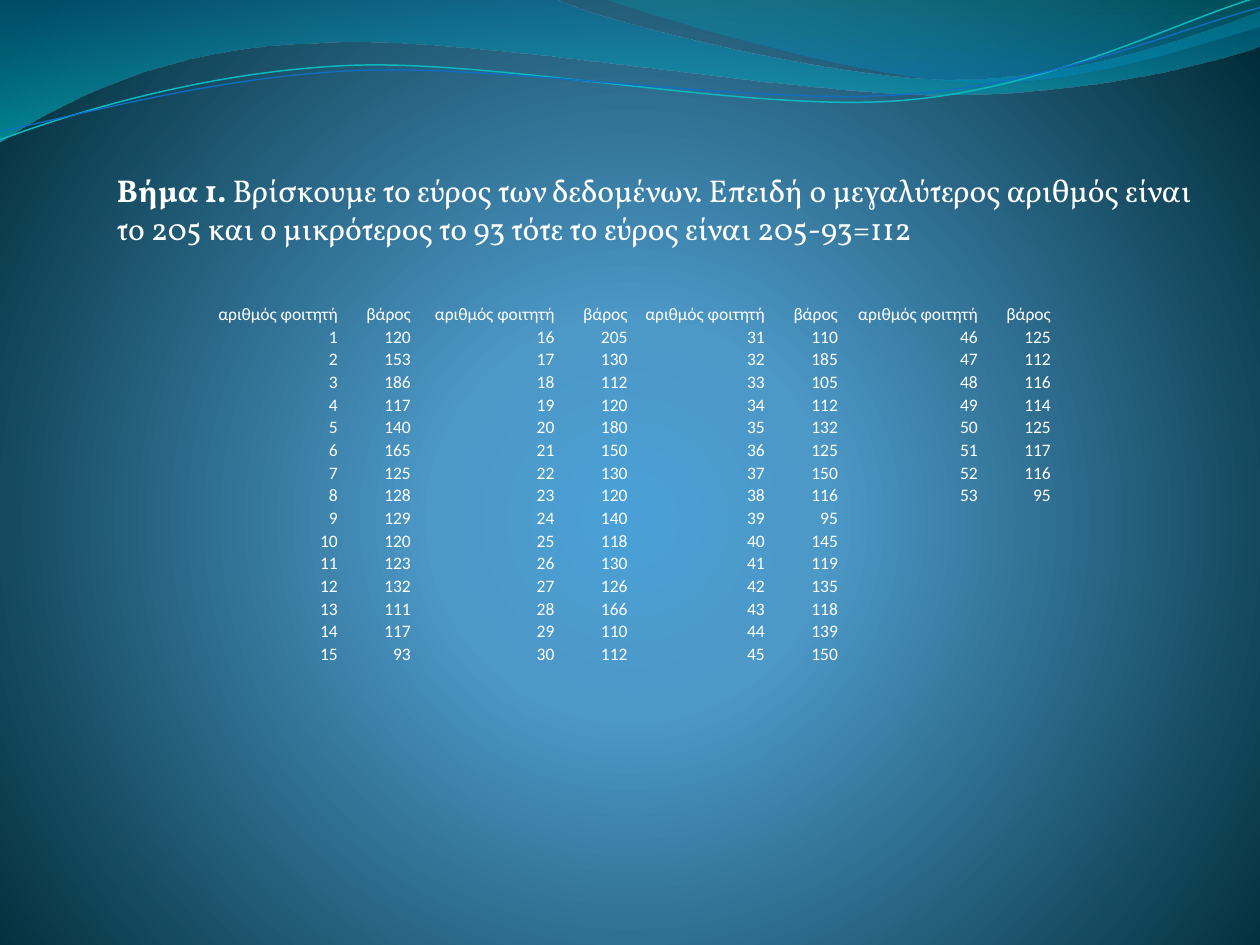
"""Build a slide with wave decoration, a statement and a table of student weights."""
from math import cos, radians, sin

from lxml import etree
from pptx import Presentation
from pptx.dml.color import RGBColor
from pptx.enum.text import MSO_ANCHOR, MSO_AUTO_SIZE, PP_ALIGN
from pptx.oxml.ns import qn
from pptx.util import Inches, Pt

RIGHT = PP_ALIGN.RIGHT
BOTTOM = MSO_ANCHOR.BOTTOM
GROW = MSO_AUTO_SIZE.SHAPE_TO_FIT_TEXT
NO_STYLE = "{2D5ABB26-0587-4C30-8999-92F81FD0307C}"
TILT = 2.7


def set_gradient(parent, stops):
    """Swap the solid fill for gradient stops of position, colour and opacity; return the gradient."""
    solid = parent.find(qn("a:solidFill"))
    grad = etree.Element(qn("a:gradFill"), rotWithShape="1")
    parent.replace(solid, grad)
    stop_list = etree.SubElement(grad, qn("a:gsLst"))
    for position, color, opacity in stops:
        stop = etree.SubElement(stop_list, qn("a:gs"), pos=str(position * 1000))
        clr = etree.SubElement(stop, qn("a:srgbClr"), val=color)
        if opacity < 100:
            etree.SubElement(clr, qn("a:alpha"), val=str(opacity * 1000))
    return grad


def add_curve(slide, bounds, segments, closed):
    """Draw a freeform in bounds; six numbers make a Bezier curve, two a line."""
    left, top, width, height = bounds
    builder = slide.shapes.build_freeform(Inches(left), Inches(top), scale=1.0)
    builder.add_line_segments([(Inches(left + width), Inches(top + height))], close=False)
    shape = builder.convert_to_shape()
    shape.shadow.inherit = False
    outline = shape.element.find(".//" + qn("a:path"))
    for child in list(outline):
        outline.remove(child)
    for i, seg in enumerate(segments):
        tag = "a:moveTo" if i == 0 else "a:lnTo" if len(seg) == 2 else "a:cubicBezTo"
        step = etree.SubElement(outline, qn(tag))
        for x, y in zip(seg[::2], seg[1::2]):
            etree.SubElement(step, qn("a:pt"), x=str(Inches(x - left)), y=str(Inches(y - top)))
    if closed:
        etree.SubElement(outline, qn("a:close"))
    return shape


prs = Presentation()
prs.slide_width, prs.slide_height = Inches(10), Inches(7.5)
s = prs.slides.add_slide(prs.slide_layouts[6])

bg = s.background.fill
bg.solid()
bg.fore_color.rgb = RGBColor.from_string("4AA0D6")
grad = set_gradient(s.element.find(".//" + qn("p:bgPr")),
                    [(0, "4AA0D6", 100), (25, "4C98C7", 100), (100, "002C38", 100)])
circle = etree.SubElement(grad, qn("a:path"), path="circle")
etree.SubElement(circle, qn("a:fillToRect"), l="10000", t="110000", r="10000", b="100000")

waves = [
    ((-0.01, -0.01, 10.02, 1.14),
     [(0, 0), (4.4, -0.01), (4.76, 0.17, 6.64, 0.63, 7.58, 0.63),
      (8.53, 0.63, 9.58, 0.26, 10, 0.09), (10.01, 0.36),
      (9.83, 0.44, 8.7, 0.76, 7.46, 0.75), (6.22, 0.75, 3.82, 0.28, 2.57, 0.34),
      (1.29, 0.36, 0.46, 0.83, -0.01, 1.13), (0, 0)],
     [(0, "0074A1", 45), (100, "00C6CF", 55)]),
    ((4.79, -0.01, 5.21, 0.7),
     [(4.79, -0.01), (5.09, 0.11, 6.82, 0.62, 7.69, 0.65),
      (8.56, 0.69, 9.61, 0.32, 10, 0.21), (10, 0), (4.79, -0.01)],
     [(0, "00A1A9", 30), (80, "008BBF", 45)]),
]
for bounds, outline, stops in waves:
    wave = add_curve(s, bounds, outline, True)
    wave.line.fill.background()
    wave.fill.solid()
    wave.fill.fore_color.rgb = RGBColor.from_string(stops[0][1])
    grad = set_gradient(wave.element.spPr, stops)
    etree.SubElement(grad, qn("a:lin"), ang="5400000", scaled="1")

strands = [
    ((-0.02, 0.22, 10.02, 0.71),
     [(0, 1.11), (0.48, 0.93, 1.58, 0.57, 2.77, 0.52), (3.95, 0.47, 5.93, 0.89, 7.13, 0.8),
      (8.33, 0.71, 9.38, 0.15, 9.98, -0.02)], "0AB8BF", 0.85),
    ((-0.02, 0.3, 10.03, 0.58),
     [(0, 1.04), (0.47, 0.96, 1.64, 0.61, 2.83, 0.56), (4.03, 0.51, 5.97, 0.84, 7.17, 0.75),
      (8.36, 0.67, 9.41, 0.21, 10, 0.06)], "0F6FC6", 0.75),
]
cos_t, sin_t = cos(radians(TILT)), sin(radians(TILT))
for bounds, outline, color, width in strands:
    cx, cy = bounds[0] + bounds[2] / 2, bounds[1] + bounds[3] / 2
    level = []
    for seg in outline:
        turned = []
        for x, y in zip(seg[::2], seg[1::2]):
            dx, dy = x - cx, y - cy
            turned += [cx + dx * cos_t - dy * sin_t, cy + dx * sin_t + dy * cos_t]
        level.append(turned)
    strand = add_curve(s, bounds, level, False)
    strand.rotation = 360 - TILT
    strand.fill.background()
    strand.line.color.rgb = RGBColor.from_string(color)
    strand.line.width = Pt(width)

box = s.shapes.add_textbox(Inches(0.83), Inches(1.31), Inches(8.9), Inches(2.83))
tf = box.text_frame
tf.word_wrap = True
tf.auto_size = GROW
p = tf.paragraphs[0]
statement = [
    ("Βήμα 1. ", True),
    ("Βρίσκουμε το εύρος των δεδομένων. Επειδή ο μεγαλύτερος αριθμός είναι το 205 "
     "και ο μικρότερος το 93 τότε το εύρος είναι 205-93=112", False),
]
for text, bold in statement:
    r = p.add_run()
    r.text = text
    r.font.name, r.font.size, r.font.bold = "Vollkorn", Pt(18), bold
    r.font.color.rgb = RGBColor.from_string("FFFFFF")

weights = [
    120, 153, 186, 117, 140, 165, 125, 128, 129, 120, 123, 132, 111, 117, 93,
    205, 130, 112, 120, 180, 150, 130, 120, 140, 118, 130, 126, 166, 110, 112,
    110, 185, 105, 112, 132, 125, 150, 116, 95, 145, 119, 135, 118, 139, 150,
    125, 112, 116, 114, 125, 117, 116, 95,
]
PER_BLOCK = 15
col_widths = [1.02, 0.58, 1.14, 0.58, 1.09, 0.58, 1.11, 0.58]
rows = [[""] * 8, ["αριθμός φοιτητή", "βάρος"] * 4] + [[""] * 8 for _ in range(PER_BLOCK)]
for i, weight in enumerate(weights):
    block, line = divmod(i, PER_BLOCK)
    rows[line + 2][2 * block:2 * block + 2] = [str(i + 1), str(weight)]

frame = s.shapes.add_table(len(rows), 8, Inches(1.67), Inches(2.22), Inches(6.67), Inches(3.06))
table = frame.table
table.first_row = table.horz_banding = False
frame.element.find(".//" + qn("a:tableStyleId")).text = NO_STYLE
for column, width in zip(table.columns, col_widths):
    column.width = Inches(width)
for row, values in zip(table.rows, rows):
    row.height = Inches(0.18)
    for cell, value in zip(row.cells, values):
        cell.fill.background()
        cell.vertical_anchor = BOTTOM
        cell.margin_left = cell.margin_right = cell.margin_top = Inches(0.01)
        cell.margin_bottom = 0
        p = cell.text_frame.paragraphs[0]
        p.alignment = RIGHT
        if not value:
            etree.SubElement(p._p, qn("a:endParaRPr"), sz="1000")
            continue
        p.text = value
        font = p.runs[0].font
        font.name, font.size = "Calibri", Pt(10)
        font.color.rgb = RGBColor.from_string("FFFFFF")

prs.save("out.pptx")
